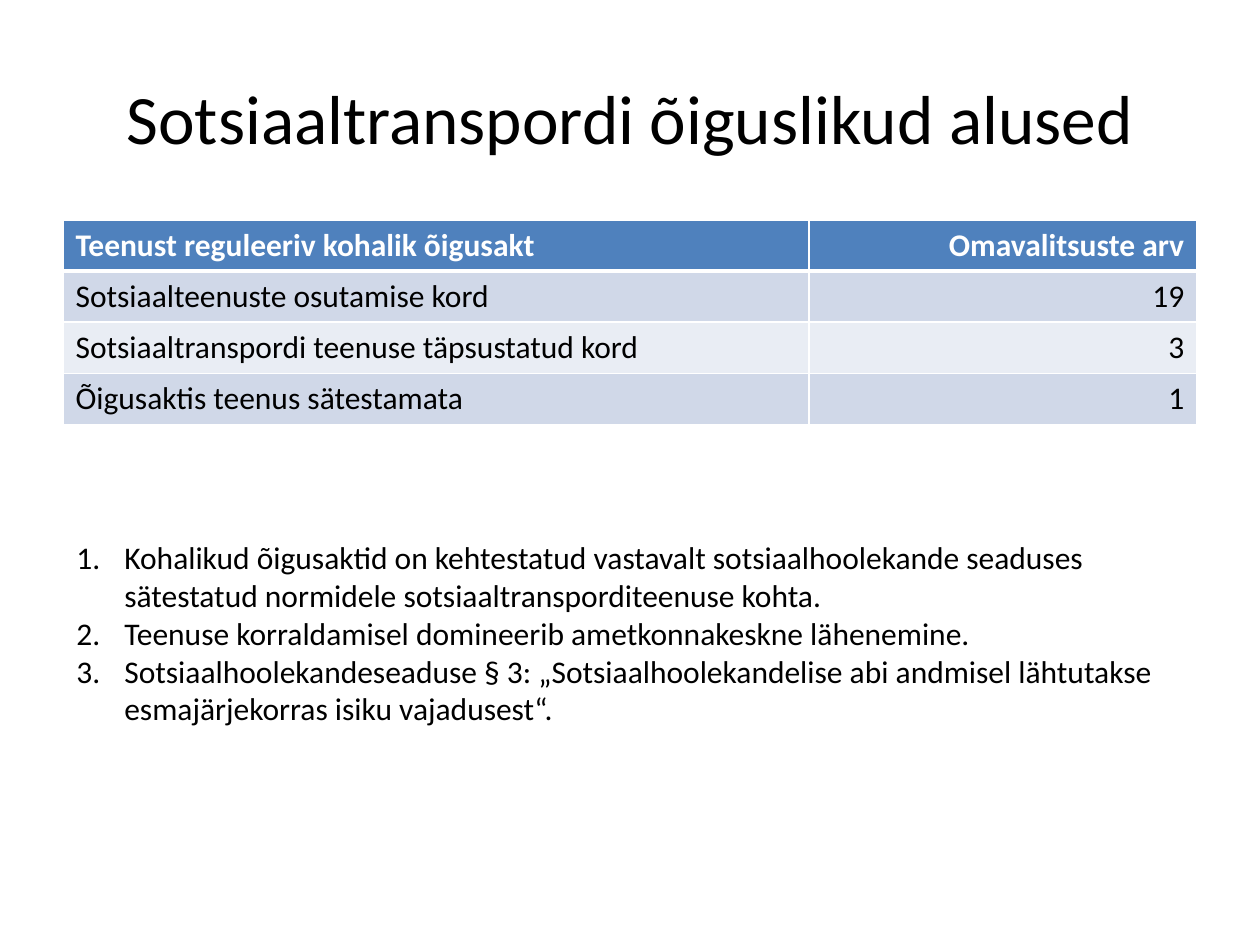
import lxml.etree
import pptx
import pptx.dml.color
import pptx.enum.text
import pptx.oxml.ns
import pptx.util

EMU_PER_PX = 914400 / 126
FONT = "Calibri"
BLACK = pptx.dml.color.RGBColor(0x00, 0x00, 0x00)
WHITE = pptx.dml.color.RGBColor(0xFF, 0xFF, 0xFF)
HEADER_BLUE = pptx.dml.color.RGBColor(0x4F, 0x81, 0xBD)
BAND_DARK = pptx.dml.color.RGBColor(0xD0, 0xD8, 0xE8)
BAND_LIGHT = pptx.dml.color.RGBColor(0xE9, 0xED, 0xF4)
ALIGN = pptx.enum.text.PP_ALIGN
AUTO_SIZE = pptx.enum.text.MSO_AUTO_SIZE

TITLE = "Sotsiaaltranspordi õiguslikud alused"
REGULATION_ROWS = [
    ("Teenust reguleeriv kohalik õigusakt", "Omavalitsuste arv"),
    ("Sotsiaalteenuste osutamise kord", "19"),
    ("Sotsiaaltranspordi teenuse täpsustatud kord", "3"),
    ("Õigusaktis teenus sätestamata", "1"),
]
COLUMN_WIDTHS = (746, 388)
ROW_HEIGHT = 51
CONCLUSIONS = [
    "Kohalikud õigusaktid on kehtestatud vastavalt sotsiaalhoolekande seaduses "
    "sätestatud normidele sotsiaaltransporditeenuse kohta.",
    "Teenuse korraldamisel domineerib ametkonnakeskne lähenemine.",
    "Sotsiaalhoolekandeseaduse § 3: „Sotsiaalhoolekandelise abi andmisel lähtutakse "
    "esmajärjekorras isiku vajadusest“.",
]


def px(length):
    return pptx.util.Emu(round(length * EMU_PER_PX))


def set_attributes(target, values):
    for name, value in values.items():
        setattr(target, name, value)


def write(paragraph, text, size, color=BLACK, bold=False, align=ALIGN.LEFT):
    paragraph.alignment = align
    run = paragraph.add_run()
    run.text = text
    set_attributes(run.font, {"name": FONT, "size": pptx.util.Pt(size), "bold": bold})
    run.font.color.rgb = color


def add_title(slide):
    title = slide.shapes.title
    set_attributes(title, {"left": px(63), "top": px(38), "width": px(1134), "height": px(157)})
    set_attributes(title.text_frame, {
        "word_wrap": True,
        "auto_size": AUTO_SIZE.NONE,
        "vertical_anchor": pptx.enum.text.MSO_ANCHOR.MIDDLE,
    })
    write(title.text_frame.paragraphs[0], TITLE, 39.6, align=ALIGN.CENTER)


def set_borders(cell, bottom_width):
    """Draw white cell borders, placed before the fill as the schema requires."""
    properties = cell._tc.get_or_add_tcPr()
    widths = {"a:lnL": 1, "a:lnR": 1, "a:lnT": 1, "a:lnB": bottom_width}
    for index, (tag, width) in enumerate(widths.items()):
        line = lxml.etree.Element(pptx.oxml.ns.qn(tag), w=str(pptx.util.Pt(width)))
        fill = lxml.etree.SubElement(line, pptx.oxml.ns.qn("a:solidFill"))
        lxml.etree.SubElement(fill, pptx.oxml.ns.qn("a:srgbClr"), val=str(WHITE))
        properties.insert(index, line)


def add_regulation_table(slide):
    frame = slide.shapes.add_table(
        len(REGULATION_ROWS), len(COLUMN_WIDTHS), px(63), px(220),
        px(sum(COLUMN_WIDTHS)), px(ROW_HEIGHT * len(REGULATION_ROWS)))
    table = frame.table
    for column, width in zip(table.columns, COLUMN_WIDTHS):
        column.width = px(width)
    for row_index, texts in enumerate(REGULATION_ROWS):
        table.rows[row_index].height = px(ROW_HEIGHT)
        header = row_index == 0
        band = BAND_DARK if row_index % 2 else BAND_LIGHT
        for column_index, text in enumerate(texts):
            cell = table.cell(row_index, column_index)
            cell.fill.solid()
            cell.fill.fore_color.rgb = HEADER_BLUE if header else band
            set_borders(cell, 3 if header else 1)
            write(cell.text_frame.paragraphs[0], text, 18,
                  color=WHITE if header else BLACK, bold=header,
                  align=ALIGN.RIGHT if column_index else ALIGN.LEFT)


def number_paragraph(paragraph, indent):
    properties = paragraph._p.get_or_add_pPr()
    properties.set("marL", str(px(indent)))
    properties.set("indent", str(px(-indent)))
    lxml.etree.SubElement(properties, pptx.oxml.ns.qn("a:buFont"), typeface="+mj-lt")
    lxml.etree.SubElement(properties, pptx.oxml.ns.qn("a:buAutoNum"), type="arabicPeriod")


def add_conclusions(slide):
    text_frame = slide.shapes.add_textbox(px(64), px(532), px(1132), px(204)).text_frame
    set_attributes(text_frame, {"word_wrap": True, "auto_size": AUTO_SIZE.SHAPE_TO_FIT_TEXT})
    for index, text in enumerate(CONCLUSIONS):
        paragraph = text_frame.add_paragraph() if index else text_frame.paragraphs[0]
        write(paragraph, text, 18)
        number_paragraph(paragraph, 48)


def main():
    presentation = pptx.Presentation()
    set_attributes(presentation, {"slide_width": px(1260), "slide_height": px(945)})
    slide = presentation.slides.add_slide(presentation.slide_layouts[5])
    add_title(slide)
    add_regulation_table(slide)
    add_conclusions(slide)
    presentation.save("out.pptx")


if __name__ == "__main__":
    main()
